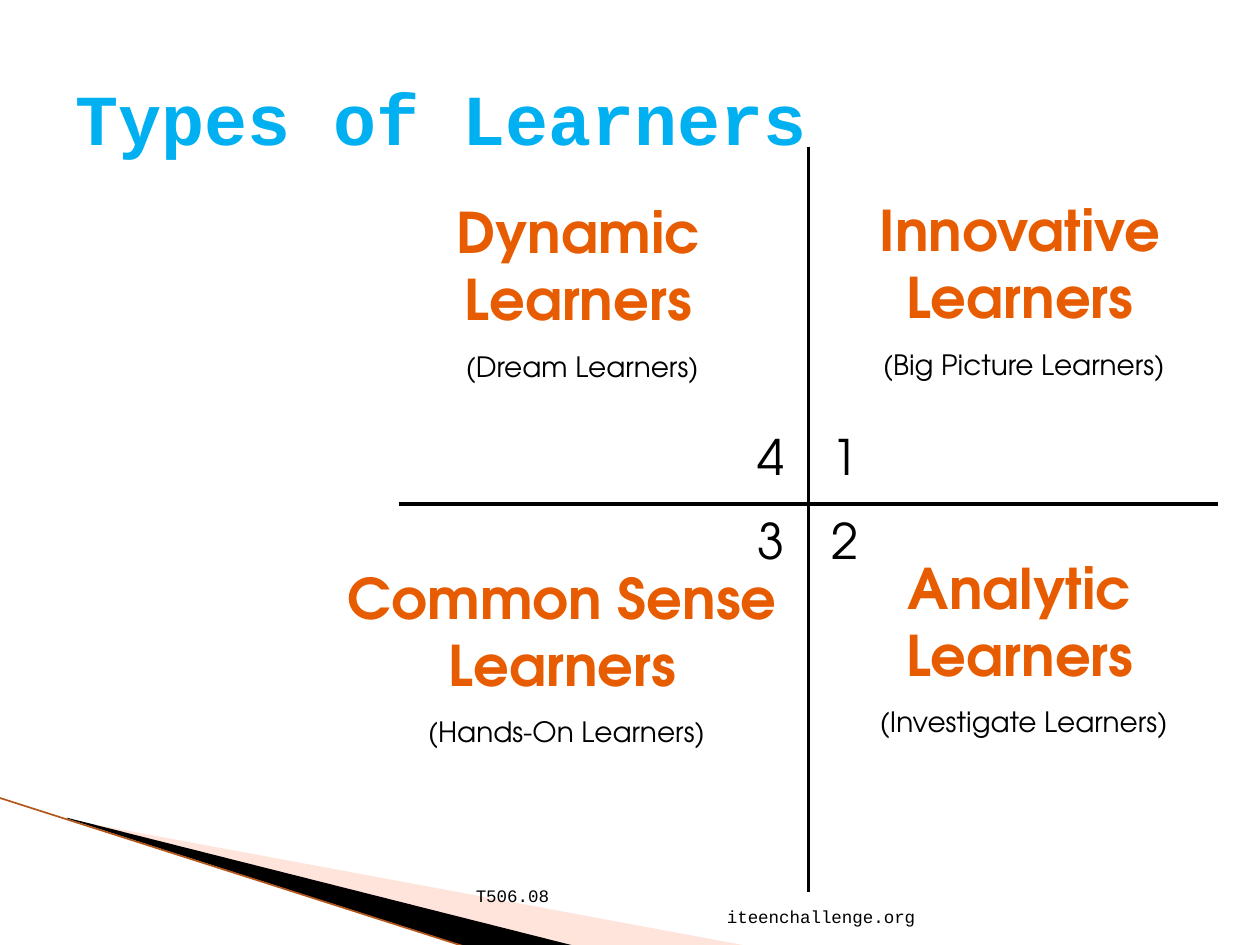
from dataclasses import dataclass
from typing import Any

from lxml.etree import SubElement
from pptx import Presentation
from pptx.dml.color import RGBColor
from pptx.enum.shapes import MSO_CONNECTOR as Connector
from pptx.enum.text import MSO_ANCHOR as Anchor, PP_ALIGN as Align
from pptx.oxml.ns import qn
from pptx.util import Pt

BLACK = RGBColor(0x00, 0x00, 0x00)
BLUE = RGBColor(0x00, 0xB0, 0xF0)
ORANGE = RGBColor(0xE7, 0x5C, 0x01)
PEACH = RGBColor(0xFF, 0xBC, 0xA5)
BROWN = RGBColor(0xB4, 0x56, 0x1A)
MONO = "Courier New"
SANS = "TeX Gyre Adventor"

TITLE = {"name": MONO, "size": Pt(41), "bold": True, "color": BLUE}
HEADING = {"name": SANS, "size": Pt(32), "bold": True, "color": ORANGE}
SUBTITLE = {"name": SANS, "size": Pt(16), "bold": False, "color": BLACK}
NUMBER = {"name": SANS, "size": Pt(28), "bold": False, "color": BLACK}
FOOTER = {"name": MONO, "size": Pt(10), "bold": False, "color": BLACK}


@dataclass
class Painter:
    page: Any

    def text(self, left, top, width, height, lines, anchor=Anchor.TOP):
        box = self.page.shapes.add_textbox(Pt(left), Pt(top), Pt(width), Pt(height))
        frame = box.text_frame
        frame.word_wrap = True
        frame.vertical_anchor = anchor
        for index, (words, look, align, after, indent) in enumerate(lines):
            para = frame.add_paragraph() if index else frame.paragraphs[0]
            para.alignment = align
            para.space_after = Pt(after)
            para._p.get_or_add_pPr().set("marL", str(Pt(indent)))
            span = para.add_run()
            span.text = words
            for key, value in look.items():
                if key == "color":
                    span.font.color.rgb = value
                else:
                    setattr(span.font, key, value)

    def line(self, start, end, color, width):
        points = [Pt(value) for value in (*start, *end)]
        line = self.page.shapes.add_connector(Connector.STRAIGHT, *points)
        line.line.color.rgb = color
        line.line.width = Pt(width)
        SubElement(line._element.spPr, qn("a:effectLst"))

    def wedge(self, points, color, opacity=100):
        start, *rest = [(Pt(x), Pt(y)) for x, y in points]
        builder = self.page.shapes.build_freeform(*start)
        builder.add_line_segments(rest, close=True)
        shape = builder.convert_to_shape()
        shape.shadow.inherit = False
        shape.fill.solid()
        shape.fill.fore_color.rgb = color
        shape.line.fill.background()
        if opacity < 100:
            tint = shape._element.spPr.find(qn("a:solidFill"))[0]
            SubElement(tint, qn("a:alpha")).set("val", str(opacity * 1000))


def main():
    deck = Presentation()
    deck.slide_width, deck.slide_height = Pt(720), Pt(540)
    painter = Painter(deck.slides.add_slide(deck.slide_layouts[6]))

    painter.wedge([(39.6, 468.5), (428.4, 540.7), (328.3, 540.7), (39.6, 468)], PEACH, 40)
    painter.wedge([(38.2, 467.3), (329, 540.7), (267.8, 541.4), (38.9, 468)], BLACK)
    painter.line((-0.7, 455.8), (267.1, 541.4), BROWN, 0.95)

    painter.text(36, 21.6, 648, 90,
                 [("Types of Learners", TITLE, Align.LEFT, 0, 0)], Anchor.MIDDLE)

    painter.line((228, 288), (696, 288), BLACK, 2)
    painter.line((462, 84), (462, 510), BLACK, 2)

    learners = [
        ("Innovative Learners", "(Big Picture Learners)", (473.8, 108, 218, 109)),
        ("Analytic Learners", "(Investigate Learners)", (476.6, 312.5, 212.4, 139)),
        ("Dynamic Learners", "(Dream Learners)", (237.6, 109.4, 185.8, 109)),
        ("Common Sense Learners", "(Hands-On Learners)", (180, 318.2, 283, 138.2)),
    ]
    for heading, subtitle, place in learners:
        painter.text(*place, [(heading, HEADING, Align.CENTER, 10, 0),
                              (subtitle, SUBTITLE, Align.CENTER, 10, 4.5)])

    corners = [("1", 468, 240), ("2", 468, 288), ("3", 426, 288), ("4", 426, 240)]
    for number, left, top in corners:
        painter.text(left, top, 32, 42, [(number, NUMBER, Align.LEFT, 10, 0)])

    painter.text(216, 504.7, 314, 28.8,
                 [("T506.08", FOOTER, Align.LEFT, 0, 48.8),
                  ("iteenchallenge.org", FOOTER, Align.RIGHT, 0, 0)], Anchor.BOTTOM)

    deck.save("out.pptx")


if __name__ == "__main__":
    main()
